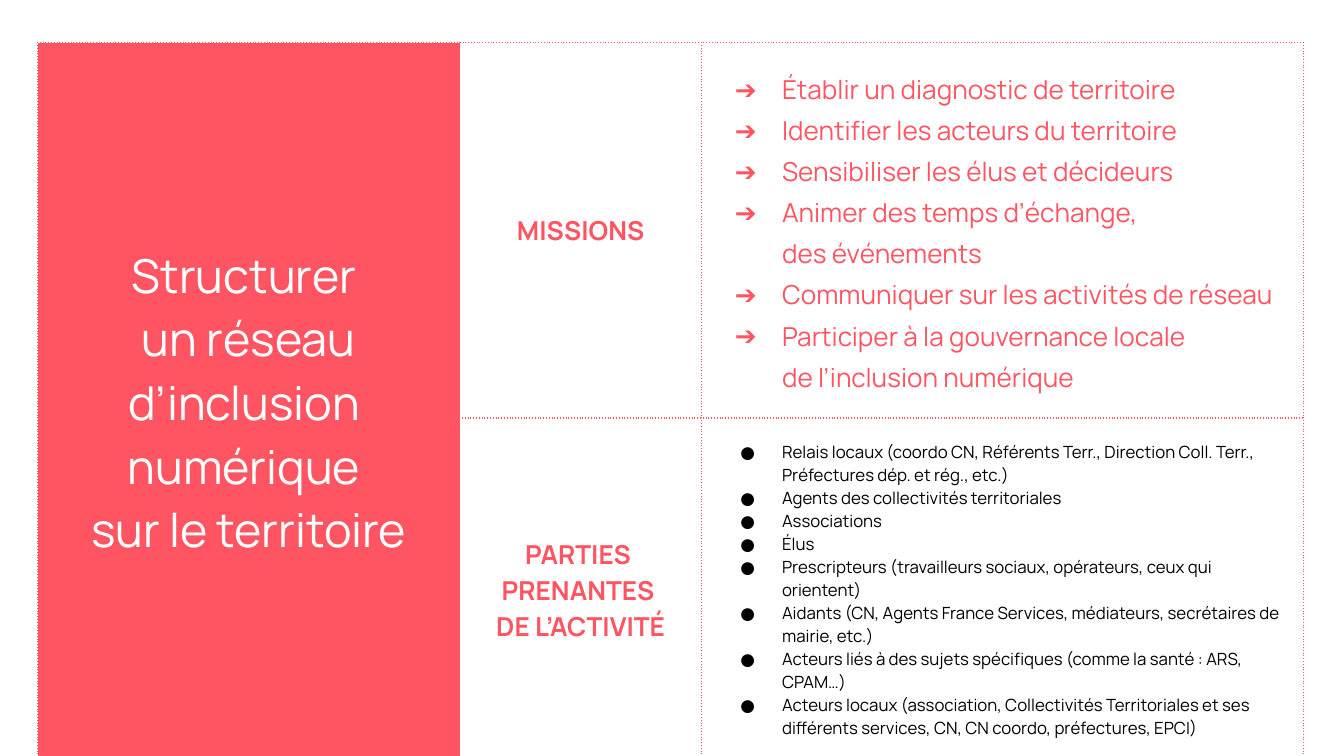
import pptx
import pptx.util
import pptx.dml.color
import pptx.enum.text
from lxml import etree

Cm, Pt = pptx.util.Cm, pptx.util.Pt
ALIGN = pptx.enum.text.PP_ALIGN
FONT = "Manrope"
CORAL, WHITE, BLACK = "FF5563", "FFFFFF", "000000"
NS = "http://schemas.openxmlformats.org/drawingml/2006/main"

COLS = [7.98, 4.57, 11.38]
ROWS = [7.09, 5.89]
TITLE = ["Structurer \nun réseau d’inclusion ", "numérique \nsur le territoire"]
TASKS = [
    "Établir un diagnostic de territoire",
    "Identifier les acteurs du territoire",
    "Sensibiliser les élus et décideurs",
    "Animer des temps d’échange, \ndes événements",
    "Communiquer sur les activités de réseau",
    "Participer à la gouvernance locale \nde l’inclusion numérique",
]
ACTORS = [
    "Relais locaux (coordo CN, Référents Terr., Direction Coll. Terr., Préfectures dép. et rég., etc.)",
    "Agents des collectivités territoriales",
    "Associations",
    "Élus",
    "Prescripteurs (travailleurs sociaux, opérateurs, ceux qui orientent)",
    "Aidants (CN, Agents France Services, médiateurs, secrétaires de mairie, etc.)",
    "Acteurs liés à des sujets spécifiques (comme la santé : ARS, CPAM…)",
    "Acteurs locaux (association, Collectivités Territoriales et ses différents services, CN, CN coordo, préfectures, EPCI)",
]
HEAD = dict(size=14, color=CORAL, bold=True)
CELLS = [
    (0, 0, TITLE, dict(size=25, color=WHITE)),
    (0, 1, ["MISSIONS"], HEAD),
    (0, 2, TASKS, dict(size=14, color=CORAL, mark="➔", hang=0.89, space=1.15)),
    (1, 1, ["PARTIES ", "PRENANTES ", "DE L’ACTIVITÉ"], HEAD),
    (1, 2, ACTORS, dict(size=9, color=BLACK, mark="●", hang=0.79)),
]


def rgb(code):
    return pptx.dml.color.RGBColor.from_string(code)


def node(top, tag, **attrs):
    return etree.SubElement(top, f"{{{NS}}}{tag}", **attrs)


def border(cell):
    props = cell._tc.get_or_add_tcPr()
    for side in "LRTB":
        line = node(props, "ln" + side, w=str(Pt(0.75)))
        node(node(line, "solidFill"), "srgbClr", val=CORAL)
        node(line, "prstDash", val="dot")


def bullet(para, mark, hang, color):
    props = para._p.get_or_add_pPr()
    props.set("marL", str(Cm(1.27)))
    props.set("indent", str(-Cm(hang)))
    node(node(props, "buClr"), "srgbClr", val=color)
    node(props, "buFont", typeface=FONT)
    node(props, "buChar", char=mark)


def write(cell, lines, size, color, bold=False, mark=None, hang=0, space=None):
    frame = cell.text_frame
    for i, line in enumerate(lines):
        para = frame.add_paragraph() if i else frame.paragraphs[0]
        para.alignment = ALIGN.LEFT if mark else ALIGN.CENTER
        if space:
            para.line_spacing = space
        if mark:
            bullet(para, mark, hang, color)
        for j, part in enumerate(line.split("\n")):
            if j:
                para.add_line_break()
            run = para.add_run()
            run.text = part
            run.font.name = FONT
            run.font.size = Pt(size)
            run.font.bold = bold
            run.font.color.rgb = rgb(color)


def main():
    deck = pptx.Presentation()
    deck.slide_width, deck.slide_height = Cm(25.4), Cm(14.29)
    slide = deck.slides.add_slide(deck.slide_layouts[6])
    table = slide.shapes.add_table(
        len(ROWS), len(COLS), Cm(0.71), Cm(0.81), Cm(sum(COLS)), Cm(sum(ROWS))
    ).table
    table.first_row = table.horz_banding = False
    for col, wide in zip(table.columns, COLS):
        col.width = Cm(wide)
    for row, high in zip(table.rows, ROWS):
        row.height = Cm(high)
    for cell in table.iter_cells():
        border(cell)
        cell.fill.background()
        cell.vertical_anchor = pptx.enum.text.MSO_ANCHOR.MIDDLE
        cell.margin_left = cell.margin_right = Cm(0.25)
        cell.margin_top = cell.margin_bottom = Cm(0.25)
    first = table.cell(0, 0)
    first.merge(table.cell(1, 0))
    first.fill.solid()
    first.fill.fore_color.rgb = rgb(CORAL)
    for row, col, lines, style in CELLS:
        write(table.cell(row, col), lines, **style)
    deck.save("out.pptx")


if __name__ == "__main__":
    main()
